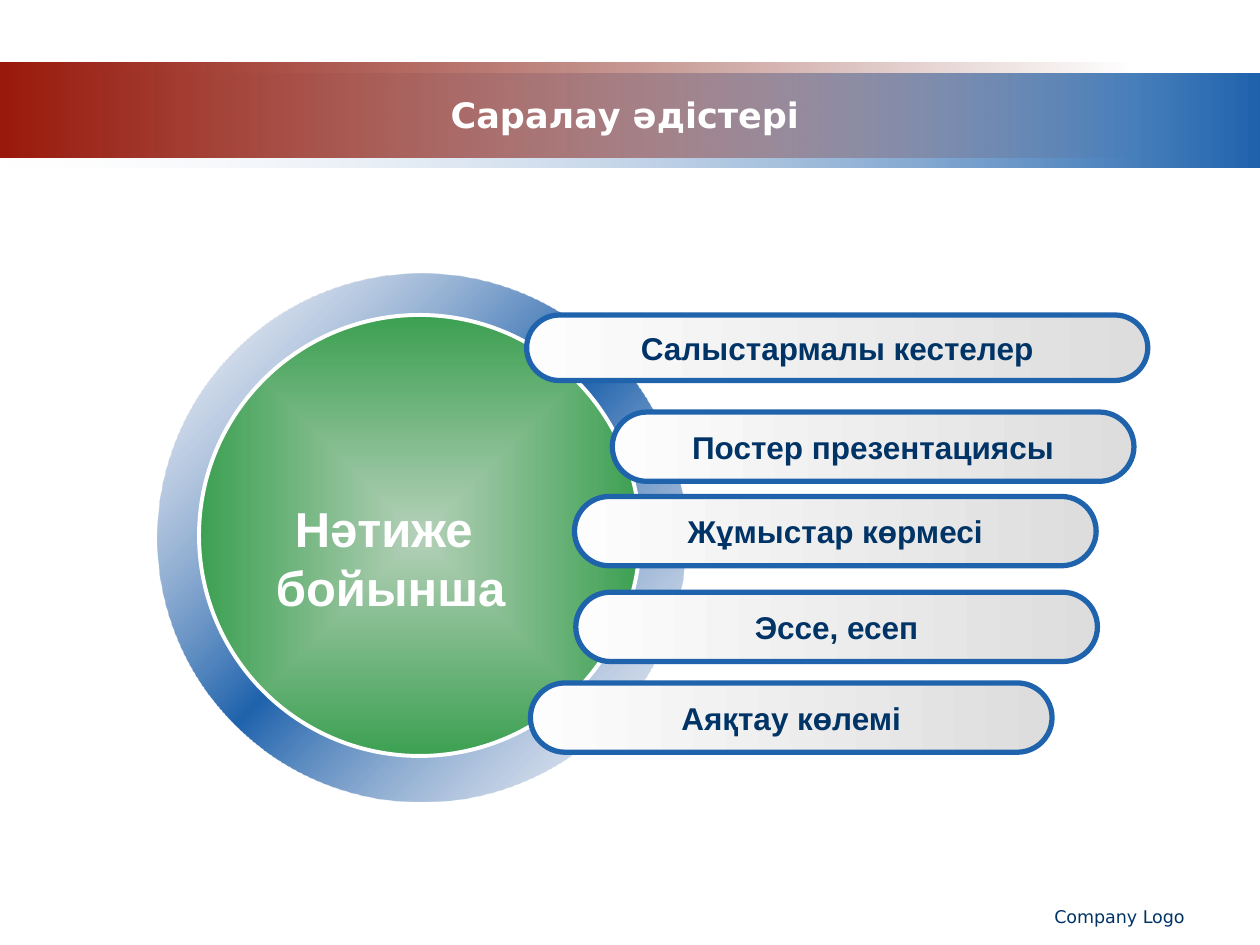
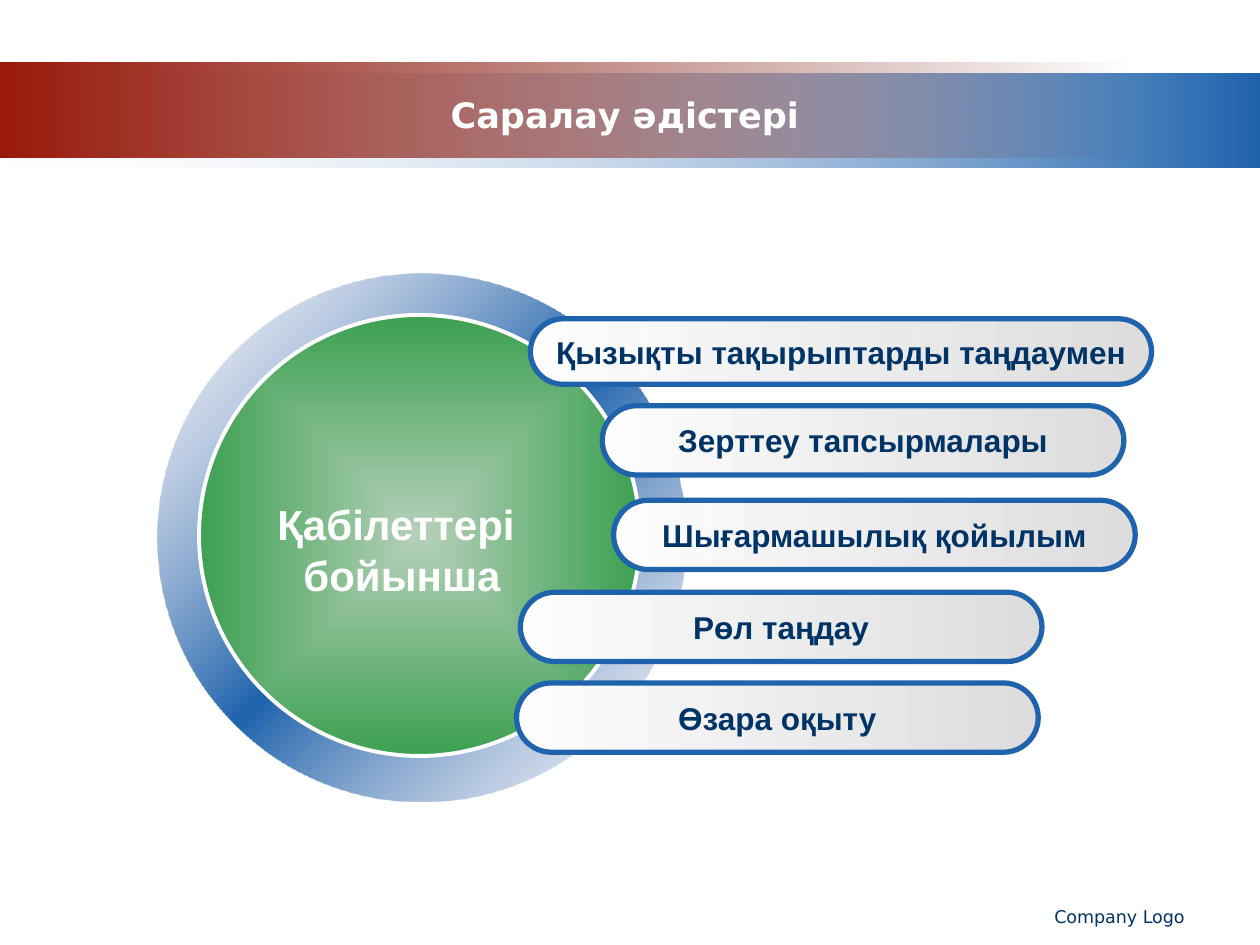
from dataclasses import dataclass

from pptx import Presentation
from pptx.dml.color import RGBColor
from pptx.enum.shapes import MSO_SHAPE
from pptx.enum.text import MSO_ANCHOR, MSO_AUTO_SIZE, PP_ALIGN
from pptx.oxml import parse_xml
from pptx.oxml.ns import nsdecls, qn
from pptx.util import Inches, Pt

RECT, OVAL = MSO_SHAPE.RECTANGLE, MSO_SHAPE.OVAL
RING, PILL = MSO_SHAPE.DONUT, MSO_SHAPE.ROUNDED_RECTANGLE
MID, TOP = MSO_ANCHOR.MIDDLE, MSO_ANCHOR.TOP
CENTER, RIGHT = PP_ALIGN.CENTER, PP_ALIGN.RIGHT
GROW = MSO_AUTO_SIZE.SHAPE_TO_FIT_TEXT

# The slide is a grid of 10 columns by 7.5 rows of square cells
COLS, ROWS = 10, 7.5
CELL = Inches(1)


@dataclass(frozen=True)
class Theme:
    white: str = "FFFFFF"
    navy: str = "003366"
    blue: str = "1F63AD"
    # Gradient stops: position, colour, opacity in percent
    cool: tuple = ((0, "F1F2F7", 0), (100, "1F63AD", 100))
    warm: tuple = ((0, "99190B", 100), (100, "6D1208", 0))
    rim: tuple = ((0, "ABB6D2", 12), (50, "1F63AD", 100), (100, "ABB6D2", 12))
    green: tuple = ((0, "B5D0B9", 100), (100, "3CA051", 100))
    grey: tuple = ((0, "FDFDFD", 100), (100, "DDDDDD", 100))
    head: str = "DejaVu Sans"
    body: str = "Arial"
    title: int = 20
    item: int = 18
    foot: int = 10


T = Theme()

# Each slide: hub lines, hub size, hub box, then pills as (text, column, row)
SLIDES = [
    (("Нәтиже ", "бойынша"), 28, (2.08, 3.91, 2.04, 1.04), (
        ("Салыстармалы кестелер", 4.18, 2.5),
        ("Постер презентациясы", 4.86, 3.27),
        ("Жұмыстар көрмесі", 4.56, 3.94),
        ("Эссе, есеп", 4.57, 4.7),
        ("Аяқтау көлемі", 4.21, 5.42))),
    (("Қабілеттері ", "бойынша"), 24, (2.09, 3.91, 2.2, 0.91), (
        ("Қызықты тақырыптарды таңдаумен", 4.21, 2.53),
        ("Зерттеу тапсырмалары", 4.78, 3.22),
        ("Шығармашылық қойылым", 4.87, 3.97),
        ("Рөл таңдау", 4.13, 4.7),
        ("Өзара оқыту", 4.1, 5.42))),
]
LONG, SHORT = (4.93, 0.52), (4.14, 0.55)


def place(box):
    """Turn grid cells into slide lengths."""
    return [int(n * CELL) for n in box]


def blend(shape, stops, angle):
    """Fill with a gradient; no angle means it spreads from the centre."""
    marks = "".join(
        f'<a:gs pos="{pos * 1000}"><a:srgbClr val="{color}">'
        f'<a:alpha val="{alpha * 1000}"/></a:srgbClr></a:gs>'
        for pos, color, alpha in stops)
    if angle is None:
        way = ('<a:path path="shape"><a:fillToRect l="50000" t="50000" '
               'r="50000" b="50000"/></a:path>')
    else:
        way = f'<a:lin ang="{angle * 60000}" scaled="0"/>'
    fill = parse_xml(f'<a:gradFill {nsdecls("a")} rotWithShape="1">'
                     f'<a:gsLst>{marks}</a:gsLst>{way}</a:gradFill>')
    shape._element.spPr.find(qn("a:prstGeom")).addnext(fill)


def draw(slide, kind, box, stops, angle=0, edge=None, width=0):
    shape = slide.shapes.add_shape(kind, *place(box))
    shape.shadow.inherit = False
    blend(shape, stops, angle)
    if edge:
        shape.line.color.rgb = RGBColor.from_string(edge)
        shape.line.width = Pt(width)
    else:
        shape.line.fill.background()
    return shape


def shade(run):
    """Drop a black shadow behind the letters."""
    drop = parse_xml(
        f'<a:effectLst {nsdecls("a")}><a:outerShdw dist="35921" dir="2700000" '
        'algn="ctr"><a:srgbClr val="000000"/></a:outerShdw></a:effectLst>')
    run._r.rPr.find(qn("a:solidFill")).addnext(drop)


def write(shape, lines, size, color, font, bold=True, align=CENTER,
          anchor=MID, wrap=False, dark=False):
    frame = shape.text_frame
    frame.word_wrap = wrap
    frame.vertical_anchor = anchor
    for i, line in enumerate(lines):
        para = frame.add_paragraph() if i else frame.paragraphs[0]
        para.alignment = align
        run = para.add_run()
        run.text = line
        run.font.size = Pt(size)
        run.font.bold = bold
        run.font.color.rgb = RGBColor.from_string(color)
        run.font.name = font
        if dark:
            shade(run)


def label(slide, box, lines, size, color, font, **style):
    shape = slide.shapes.add_textbox(*place(box))
    write(shape, lines, size, color, font, **style)
    return shape


def frame(slide):
    """Bands, footer and title shared by all slides."""
    draw(slide, RECT, (0, 0.58, COLS, 0.75), T.cool)
    draw(slide, RECT, (0, 0.5, 0.9 * COLS, 0.75), T.warm)
    label(slide, (6.33, 7.14, 3.17, 0.3), ["Company Logo"], T.foot, T.navy,
          T.head, bold=False, align=RIGHT, anchor=TOP, wrap=True)
    label(slide, (0.92, 0.6, 8.08, 0.62), ["Саралау әдістері"], T.title,
          T.white, T.head, wrap=True)


def wheel(slide):
    """Blue rim around a green disc."""
    rim = draw(slide, RING, (1.25, 2.17, 4.19, 4.19), T.rim, 45)
    rim.adjustments[0] = 0.37 / 4.19
    draw(slide, OVAL, (1.58, 2.5, 3.5, 3.5), T.green, None, T.white, 2.25)


def pills(slide, items):
    for i, (text, col, row) in enumerate(items):
        size = SHORT if i else LONG
        pill = draw(slide, PILL, (col, row, *size), T.grey, 0, T.blue, 3)
        pill.adjustments[0] = 0.5
        write(pill, [text], T.item, T.navy, T.body)


def main():
    deck = Presentation()
    deck.slide_width, deck.slide_height = place((COLS, ROWS))
    for lines, size, box, items in SLIDES:
        slide = deck.slides.add_slide(deck.slide_layouts[6])
        frame(slide)
        wheel(slide)
        pills(slide, items)
        hub = label(slide, box, lines, size, T.white, T.body, anchor=TOP,
                    dark=True)
        hub.text_frame.auto_size = GROW
    deck.save("out.pptx")


if __name__ == "__main__":
    main()
